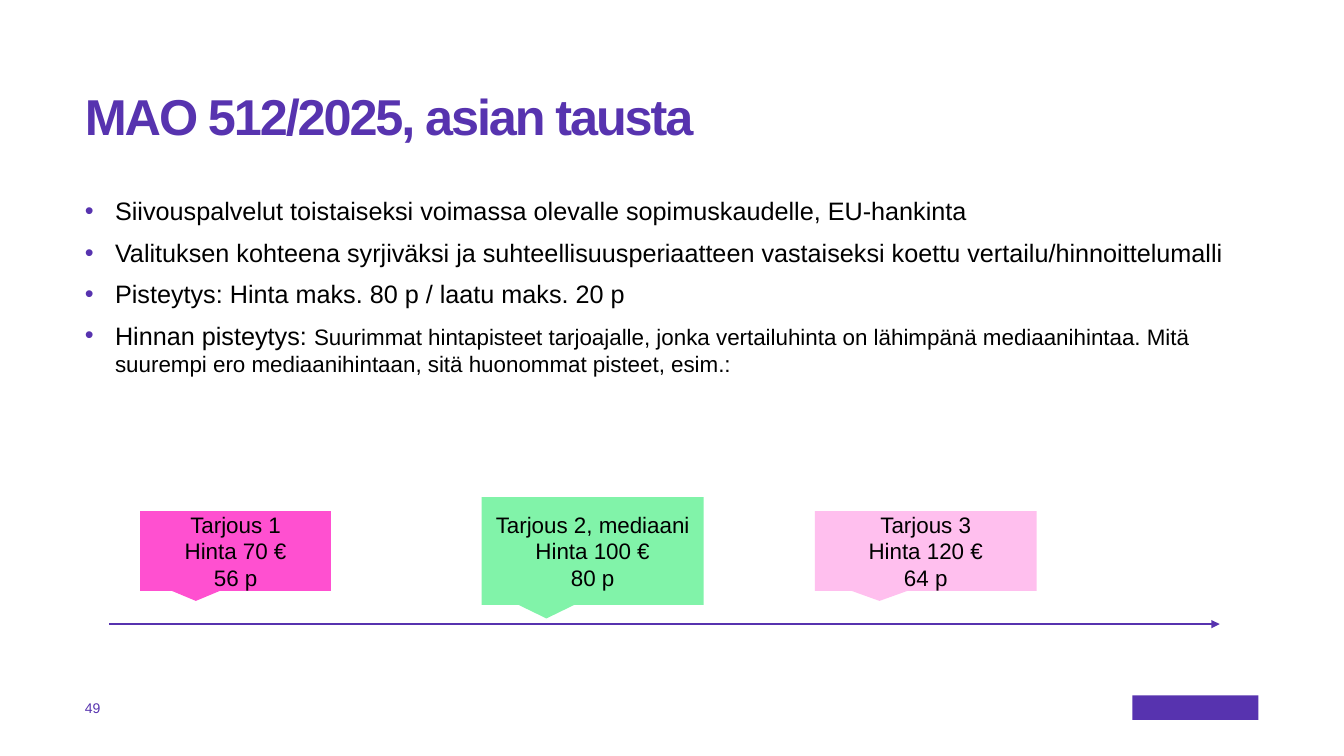
from dataclasses import dataclass

import pptx
import pptx.dml.color
import pptx.enum.shapes
import pptx.enum.text
import pptx.oxml
import pptx.oxml.ns
import pptx.util

RGBColor = pptx.dml.color.RGBColor
Shape = pptx.enum.shapes.MSO_SHAPE
Align = pptx.enum.text.PP_ALIGN
Anchor = pptx.enum.text.MSO_ANCHOR

PURPLE = RGBColor(0x57, 0x33, 0xAF)
BLACK = RGBColor(0x00, 0x00, 0x00)
MAGENTA = RGBColor(0xFF, 0x50, 0xD0)
GREEN = RGBColor(0x81, 0xF3, 0xA9)
PINK = RGBColor(0xFF, 0xBF, 0xEE)

FONT = "Arial"
SLIDE_WIDTH = pptx.util.Inches(13.33)
SLIDE_HEIGHT = pptx.util.Inches(7.5)
COLUMNS, ROWS = 160, 90
MARGIN = 10.1
FOOTER_ROW, FOOTER_ROWS = 82.8, 2.9
OFFER_MIDDLE = 65.6
ARROW_ROW = 74.3


@dataclass(frozen=True)
class Area:
    """A rectangle in grid columns and rows."""
    column: float
    row: float
    columns: float
    rows: float

    def lengths(self) -> tuple[int, int, int, int]:
        return across(self.column), down(self.row), across(self.columns), down(self.rows)


@dataclass(frozen=True)
class Span:
    text: str
    size: float = 18


@dataclass(frozen=True)
class Offer:
    name: str
    price: int
    points: int
    column: float
    columns: float
    rows: float
    fill: RGBColor


BULLETS = [
    [Span("Siivouspalvelut toistaiseksi voimassa olevalle sopimuskaudelle, EU-hankinta")],
    [Span("Valituksen kohteena syrjiväksi ja suhteellisuusperiaatteen vastaiseksi koettu "
          "vertailu/hinnoittelumalli")],
    [Span("Pisteytys: Hinta maks. 80 p / laatu maks. 20 p")],
    [Span("Hinnan pisteytys: "),
     Span("Suurimmat hintapisteet tarjoajalle, jonka vertailuhinta on lähimpänä mediaanihintaa. "
          "Mitä suurempi ero mediaanihintaan, sitä huonommat pisteet, esim.:", 16)],
]

OFFERS = [
    Offer("Tarjous 1", 70, 56, 16.7, 22.7, 9.5, MAGENTA),
    Offer("Tarjous 2, mediaani", 100, 80, 57.35, 26.4, 12.85, GREEN),
    Offer("Tarjous 3", 120, 64, 97, 26.4, 9.5, PINK),
]


def across(columns: float) -> int:
    return round(SLIDE_WIDTH * columns / COLUMNS)


def down(rows: float) -> int:
    return round(SLIDE_HEIGHT * rows / ROWS)


def add_span(para, text: str, *, size: float, color: RGBColor = BLACK,
             bold: bool = False, tracking: float = 0) -> None:
    span = para.add_run()
    span.text = text
    span.font.name = FONT
    span.font.size = pptx.util.Pt(size)
    span.font.bold = bold
    span.font.color.rgb = color
    if tracking:
        span._r.get_or_add_rPr().set("spc", str(round(tracking * 100)))


def next_paragraph(frame, index: int):
    return frame.add_paragraph() if index else frame.paragraphs[0]


def prepare_frame(box, anchor: Anchor):
    """Return the box's text frame, wrapped and without insets."""
    frame = box.text_frame
    frame.word_wrap = True
    frame.auto_size = pptx.enum.text.MSO_AUTO_SIZE.NONE
    frame.vertical_anchor = anchor
    frame.margin_left = frame.margin_top = frame.margin_right = frame.margin_bottom = 0
    return frame


def place(box, area: Area) -> None:
    box.left, box.top, box.width, box.height = area.lengths()


def add_bullet(para) -> None:
    indent = pptx.util.Inches(0.3)
    properties = para._p.get_or_add_pPr()
    properties.set("marL", str(indent))
    properties.set("indent", str(-indent))
    namespace = pptx.oxml.ns.nsdecls("a")
    for xml in (
        f'<a:buClr {namespace}><a:srgbClr val="{PURPLE}"/></a:buClr>',
        f'<a:buFont {namespace} typeface="{FONT}"/>',
        f'<a:buChar {namespace} char="•"/>',
    ):
        properties.append(pptx.oxml.parse_xml(xml))


def add_filled_shape(page, kind: Shape, area: Area, fill: RGBColor):
    shape = page.shapes.add_shape(kind, *area.lengths())
    shape.shadow.inherit = False
    shape.fill.solid()
    shape.fill.fore_color.rgb = fill
    shape.line.fill.background()
    return shape


def write_title(page) -> None:
    title = page.shapes.title
    place(title, Area(MARGIN, 11, 140, 20.8))
    para = prepare_frame(title, Anchor.TOP).paragraphs[0]
    para.alignment = Align.LEFT
    para.line_spacing = 0.9
    add_span(para, "MAO 512/2025, asian tausta", size=36, color=PURPLE, bold=True, tracking=-1.5)


def write_bullets(page) -> None:
    body = page.placeholders[1]
    place(body, Area(MARGIN, 23.3, 141.7, 62.4))
    frame = prepare_frame(body, Anchor.TOP)
    for index, spans in enumerate(BULLETS):
        para = next_paragraph(frame, index)
        add_bullet(para)
        para.space_before = pptx.util.Pt(8 if index else 0)
        for span in spans:
            add_span(para, span.text, size=span.size)


def draw_price_arrow(page) -> None:
    row = down(ARROW_ROW)
    arrow = page.shapes.add_connector(
        pptx.enum.shapes.MSO_CONNECTOR.STRAIGHT, across(13), row, across(145.2), row)
    arrow.line.color.rgb = PURPLE
    arrow.line.width = pptx.util.Pt(1.5)
    namespace = pptx.oxml.ns.nsdecls("a")
    arrow.line._get_or_add_ln().append(
        pptx.oxml.parse_xml(f'<a:tailEnd {namespace} type="triangle"/>'))
    arrow._element.spPr.append(pptx.oxml.parse_xml(f"<a:effectLst {namespace}/>"))


def draw_offer(page, offer: Offer) -> None:
    area = Area(offer.column, OFFER_MIDDLE - offer.rows / 2, offer.columns, offer.rows)
    callout = add_filled_shape(page, Shape.RECTANGULAR_CALLOUT, area, offer.fill)
    frame = callout.text_frame
    frame.word_wrap = True
    frame.vertical_anchor = Anchor.MIDDLE
    lines = [offer.name, f"Hinta {offer.price} €", f"{offer.points} p"]
    for index, line in enumerate(lines):
        para = next_paragraph(frame, index)
        para.alignment = Align.CENTER
        add_span(para, line, size=16)


def draw_footer(page) -> None:
    area = Area(MARGIN, FOOTER_ROW, 5.6, FOOTER_ROWS)
    number = page.shapes.add_textbox(*area.lengths())
    para = prepare_frame(number, Anchor.MIDDLE).paragraphs[0]
    add_span(para, "49", size=10, color=PURPLE)
    add_filled_shape(page, Shape.RECTANGLE, Area(134.8, FOOTER_ROW, 15, FOOTER_ROWS), PURPLE)


def main() -> None:
    deck = pptx.Presentation()
    deck.slide_width, deck.slide_height = SLIDE_WIDTH, SLIDE_HEIGHT
    page = deck.slides.add_slide(deck.slide_layouts[1])
    write_title(page)
    write_bullets(page)
    draw_price_arrow(page)
    for offer in OFFERS:
        draw_offer(page, offer)
    draw_footer(page)
    deck.save("out.pptx")


if __name__ == "__main__":
    main()
